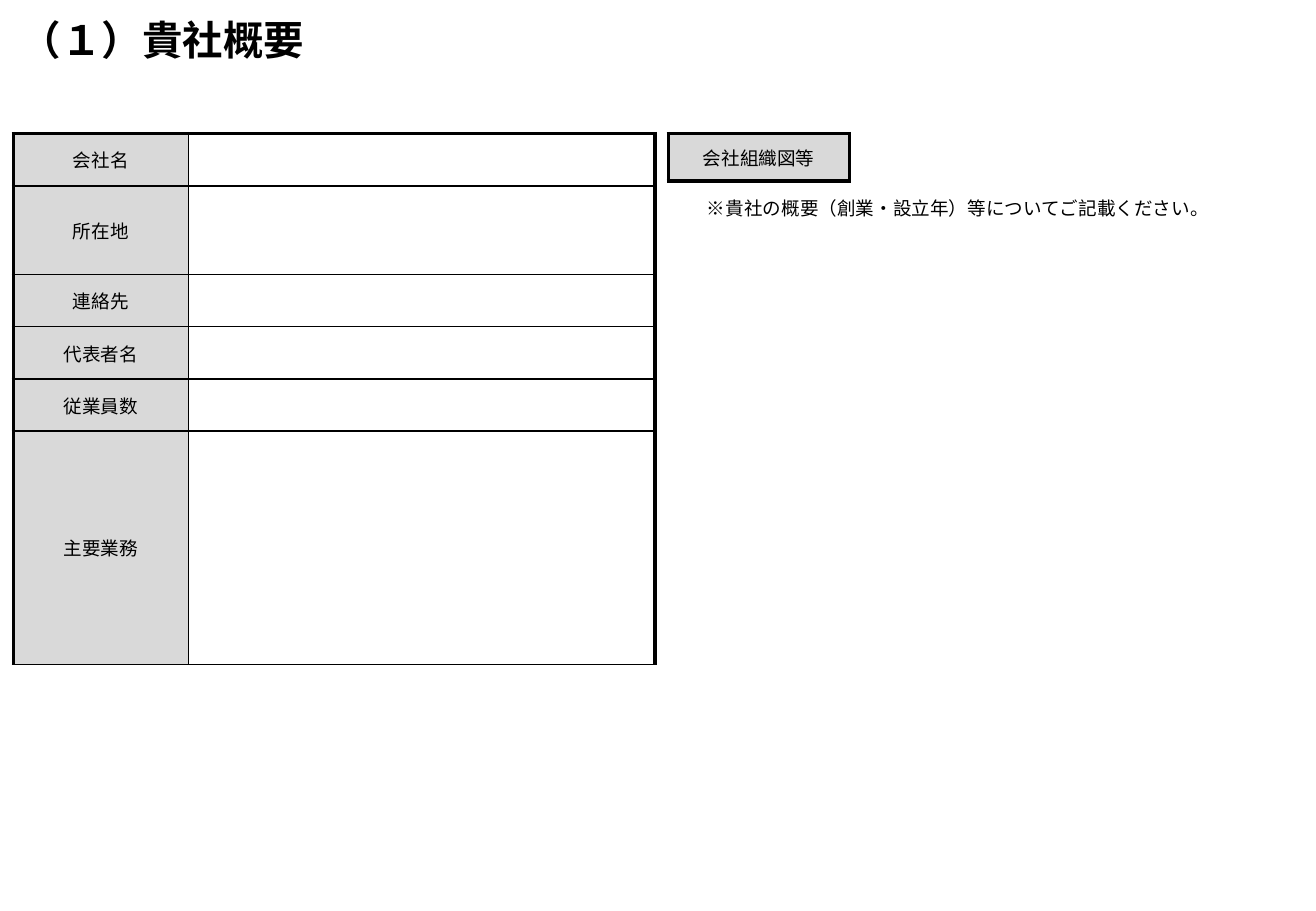
from pptx import Presentation
from pptx.dml.color import RGBColor
from pptx.enum.text import MSO_ANCHOR, PP_ALIGN
from pptx.oxml import parse_xml
from pptx.oxml.ns import nsdecls
from pptx.util import Inches, Pt
from lxml.etree import SubElement

FONT = "Noto Sans CJK JP"
COLORS = {"ink": "000000", "label": "D9D9D9"}
THIN, THICK = 1, 2.25


def write(frame, text, size=11, bold=False, align=PP_ALIGN.LEFT, before=0):
    para = frame.paragraphs[0]
    para.alignment = align
    para.space_before = Pt(before)
    run = para.add_run()
    run.text = text
    font = run.font
    font.size, font.bold, font.name = Pt(size), bold, FONT
    font.color.rgb = RGBColor.from_string(COLORS["ink"])
    props = run._r.get_or_add_rPr()
    tag = props.find("{*}latin").tag.replace("latin", "ea")
    SubElement(props, tag).set("typeface", FONT)


def grid(left, top, cols, labels, rows):
    frame = slide.shapes.add_table(
        len(rows), len(cols), Inches(left), Inches(top),
        Inches(sum(cols)), Inches(sum(rows)))
    table = frame.table
    table.first_row = table.horz_banding = False
    for col, width in zip(table.columns, cols):
        col.width = Inches(width)
    for r, height in enumerate(rows):
        table.rows[r].height = Inches(height)
        for c in range(len(cols)):
            cell = table.cell(r, c)
            single = len(rows) == 1
            edges = {
                "lnL": THICK if c == 0 else THIN,
                "lnR": THICK if c == len(cols) - 1 else THIN,
                "lnT": THICK if r == 0 else THIN,
                "lnB": THICK if single else THIN,
            }
            props = cell._tc.get_or_add_tcPr()
            for edge, width in edges.items():
                props.append(parse_xml(
                    f'<a:{edge} {nsdecls("a")} w="{Pt(width)}"><a:solidFill>'
                    f'<a:srgbClr val="{COLORS["ink"]}"/></a:solidFill></a:{edge}>'))
            if c:
                cell.fill.background()
                continue
            cell.fill.solid()
            cell.fill.fore_color.rgb = RGBColor.from_string(COLORS["label"])
            cell.vertical_anchor = MSO_ANCHOR.MIDDLE
            cell.margin_left = cell.margin_right = Inches(0.15)
            cell.margin_top = cell.margin_bottom = Inches(0.07)
            write(cell.text_frame, labels[r], align=PP_ALIGN.CENTER, before=2.2)


deck = Presentation()
deck.slide_width, deck.slide_height = Inches(10.83), Inches(7.5)
slide = deck.slides.add_slide(deck.slide_layouts[6])

title = slide.shapes.add_textbox(0, 0, Inches(10.83), Inches(0.65)).text_frame
title.word_wrap = True
title.vertical_anchor = MSO_ANCHOR.MIDDLE
title.margin_left = Inches(0.17)
write(title, "（１）貴社概要", size=24, bold=True)

grid(0.11, 1.1, [1.44, 3.84],
     ["会社名", "所在地", "連絡先", "代表者名", "従業員数", "主要業務"],
     [0.43, 0.73, 0.43, 0.43, 0.43, 1.92])
grid(5.5, 1.1, [1.49], ["会社組織図等"], [0.39])

note = slide.shapes.add_textbox(
    Inches(5.72), Inches(1.57), Inches(4.33), Inches(0.29)).text_frame
note.word_wrap = True
write(note, "※貴社の概要（創業・設立年）等についてご記載ください。")

deck.save("out.pptx")
